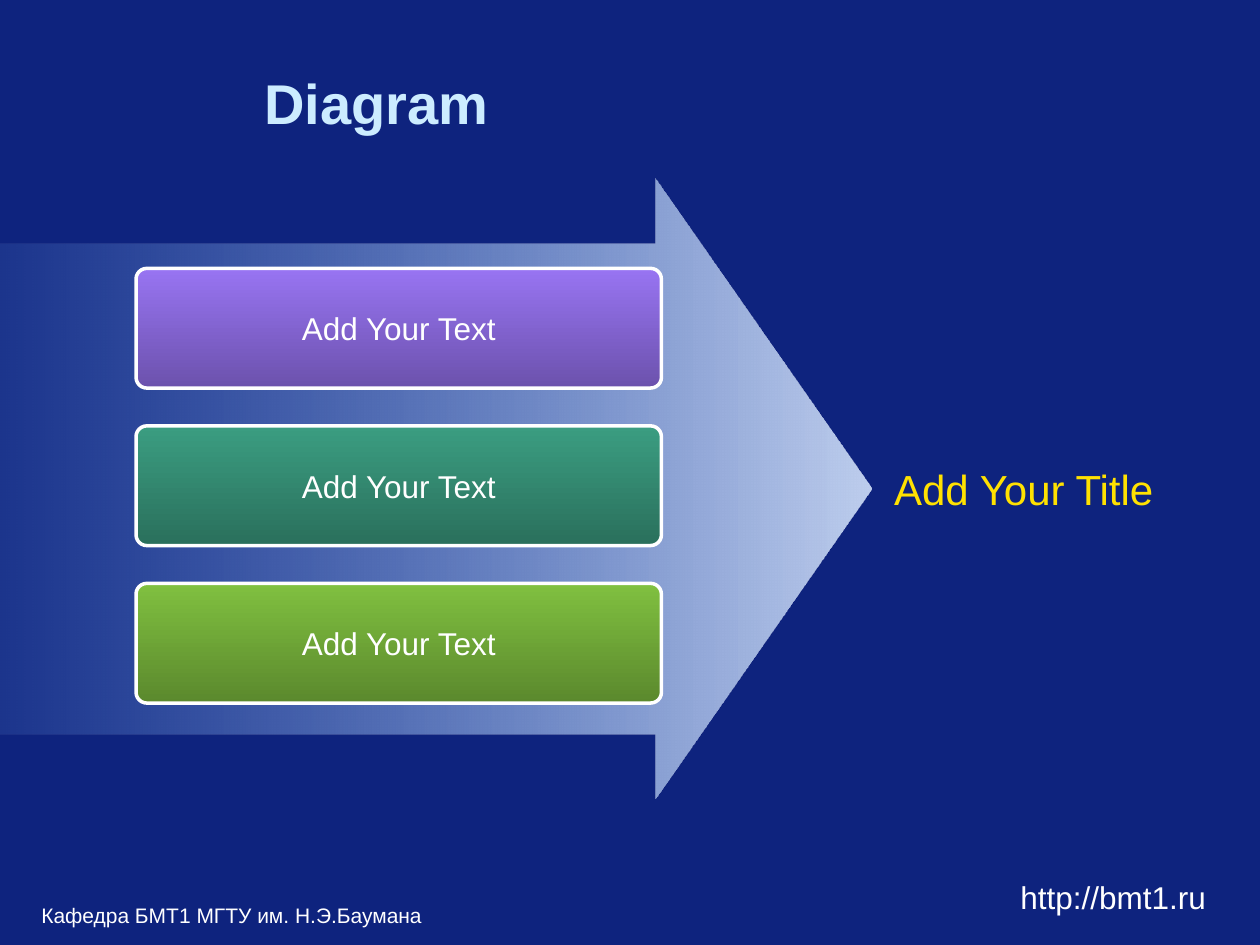
"""Build a slide with three text panels on an arrow that leads to a title."""
from lxml.etree import SubElement
from pptx import Presentation
from pptx.dml.color import RGBColor
from pptx.enum.shapes import MSO_SHAPE
from pptx.enum.text import MSO_ANCHOR, PP_ALIGN
from pptx.oxml.ns import qn
from pptx.util import Inches, Pt

PANELS = [
    ("Add Your Text", "9874F2"),
    ("Add Your Text", "3B9D81"),
    ("Add Your Text", "80C040"),
]
LABELS = [
    ("Diagram", (2, 0.5, 7.58, 0.62), "head", PP_ALIGN.LEFT, MSO_ANCHOR.MIDDLE),
    ("Кафедра БМТ1 МГТУ им. Н.Э.Баумана", (0.23, 7.11, 5.86, 0.55), "foot",
     PP_ALIGN.LEFT, MSO_ANCHOR.TOP),
    ("http://bmt1.ru", (6.5, 6.92, 3.17, 0.25), "body",
     PP_ALIGN.RIGHT, MSO_ANCHOR.TOP),
]
GOAL = "Add Your Title"
THEME = {
    "font": "Arial", "back": "0E237E", "arrow": "709EE2", "line": "FFFFFF",
    "head": (32, "CCECFF", True), "goal": (24, "FFE101", False),
    "body": (18, "FFFFFF", False), "foot": (12, "FFFFFF", False),
}
LEFT, TOP, WIDE, HIGH, STEP = 1.08, 2.13, 4.17, 0.95, 1.25
ROUND = 0.09


def rgb(code):
    return RGBColor.from_string(code)


def write(shape, text, style, align, anchor=MSO_ANCHOR.MIDDLE, wrap=True):
    size, color, bold = THEME[style]
    frame = shape.text_frame
    frame.text = text
    frame.word_wrap = wrap
    frame.vertical_anchor = anchor
    para = frame.paragraphs[0]
    para.alignment = align
    font = para.runs[0].font
    font.name, font.size, font.bold = THEME["font"], Pt(size), bold
    font.color.rgb = rgb(color)


def add_form(slide, kind, box, *ratios):
    shape = slide.shapes.add_shape(kind, *map(Inches, box))
    shape.shadow.inherit = False
    shape.line.fill.background()
    for i, ratio in enumerate(ratios):
        shape.adjustments[i] = ratio
    return shape


def blend(shape, color, angle, *changes):
    fill = shape.fill
    fill.gradient()
    fill.gradient_angle = angle
    for stop, place, (tag, value) in zip(fill.gradient_stops, (0, 1), changes):
        stop.position = place
        stop.color.rgb = rgb(color)
        if tag:
            node = shape.element.spPr.findall(".//" + qn("a:srgbClr"))[place]
            SubElement(node, qn(tag), val=str(value))


def main():
    deck = Presentation()
    deck.slide_width, deck.slide_height = Inches(10), Inches(7.5)
    slide = deck.slides.add_slide(deck.slide_layouts[6])
    slide.background.fill.solid()
    slide.background.fill.fore_color.rgb = rgb(THEME["back"])

    arrow = add_form(slide, MSO_SHAPE.RIGHT_ARROW, (0, 1.42, 6.92, 4.92), 0.79, 0.35)
    blend(arrow, THEME["arrow"], 0, ("a:alpha", 15000), ("a:tint", 57600))

    for i, (text, color) in enumerate(PANELS):
        box = (LEFT, TOP + i * STEP, WIDE, HIGH)
        panel = add_form(slide, MSO_SHAPE.ROUNDED_RECTANGLE, box, ROUND)
        blend(panel, color, 270, (None, 0), ("a:shade", 46300))
        panel.line.color.rgb = rgb(THEME["line"])
        panel.line.width = Pt(2)
        write(panel, text, "body", PP_ALIGN.CENTER, wrap=False)

    goal = add_form(slide, MSO_SHAPE.ROUNDED_RECTANGLE, (6.75, 3.17, 2.75, 1.42), ROUND)
    goal.fill.background()
    write(goal, GOAL, "goal", PP_ALIGN.CENTER)

    for text, box, style, align, anchor in LABELS:
        label = slide.shapes.add_textbox(*map(Inches, box))
        write(label, text, style, align, anchor)

    deck.save("out.pptx")


if __name__ == "__main__":
    main()
